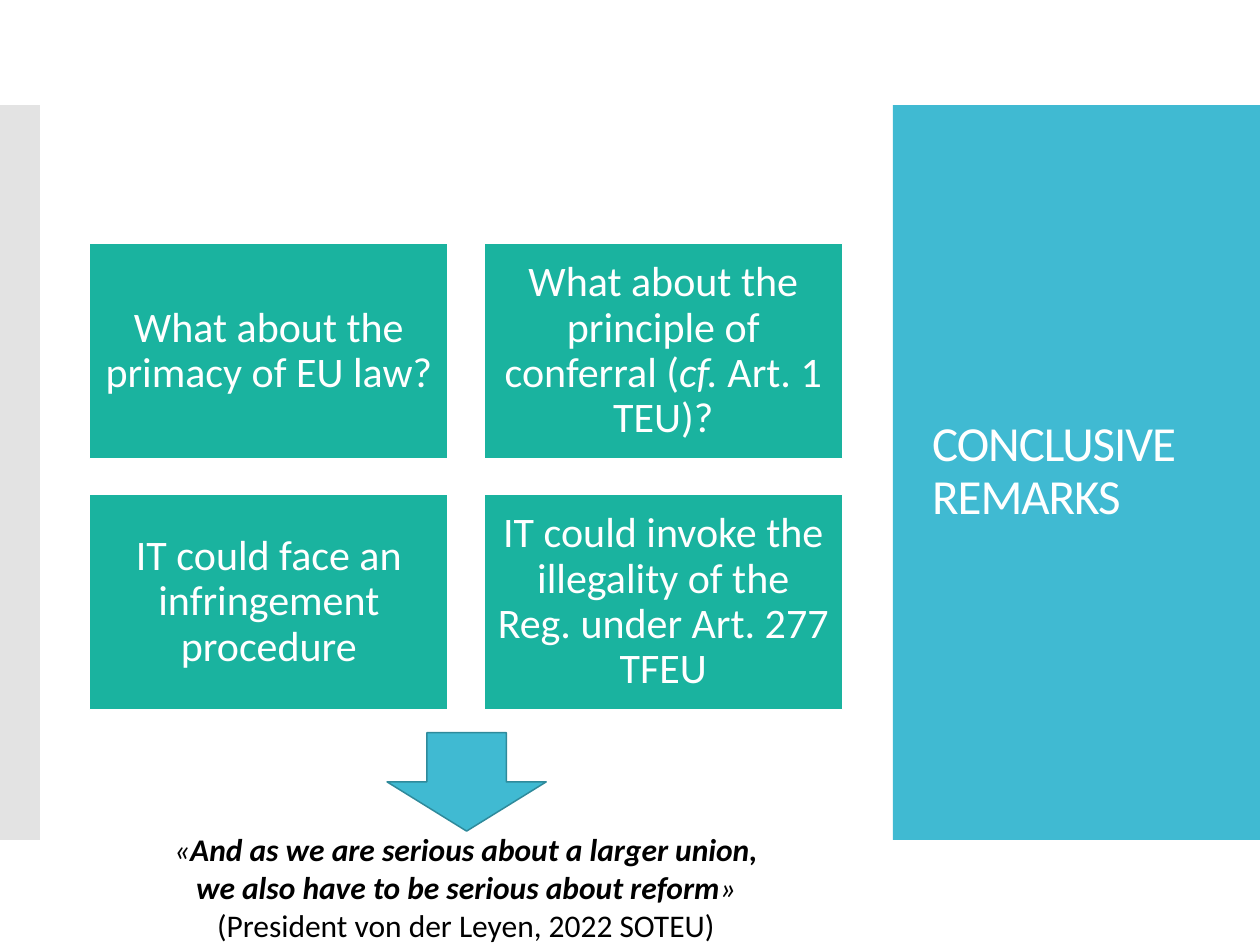
from lxml import etree
from pptx import Presentation
from pptx import util as u
from pptx.dml.color import RGBColor
from pptx.enum import shapes, text
from pptx.oxml.ns import qn

Pt = u.Pt
TEAL, GREEN, WHITE = "40BAD2", "1AB39F", "FFFFFF"


def color(hex_string):
    return RGBColor.from_string(hex_string)


def add_block(kind, left, top, width, height, fill, line=None):
    block = slide.shapes.add_shape(kind, Pt(left), Pt(top), Pt(width), Pt(height))
    block.shadow.inherit = False
    block.fill.solid()
    block.fill.fore_color.rgb = color(fill)
    if line:
        block.line.color.rgb = color(line)
        block.line.width = Pt(0.85)
    else:
        block.line.fill.background()
    return block


prs = Presentation()
prs.slide_width, prs.slide_height = Pt(720), Pt(540)
slide = prs.slides.add_slide(prs.slide_layouts[6])
RECT = shapes.MSO_SHAPE.RECTANGLE

# Side panel and half-transparent strip
add_block(RECT, 510.3, 60, 209.7, 420, TEAL)
strip = add_block(RECT, 0, 60, 22.8, 420, "C8C8C8")
strip_color = strip.fill._xPr.find(qn("a:solidFill"))[0]
etree.SubElement(strip_color, qn("a:alpha"), val="50000")

# Title
title = slide.shapes.add_textbox(Pt(525.6), Pt(88.6), Pt(174.2), Pt(362.2))
title.text_frame.word_wrap = True
title.text_frame.vertical_anchor = text.MSO_ANCHOR.MIDDLE
heading = title.text_frame.paragraphs[0]
heading.text = "CONCLUSIVE REMARKS"
heading.line_spacing = 0.9
heading_font = heading.runs[0].font
heading_font.name, heading_font.size = "Calibri", Pt(28)
heading_font.color.rgb = color(WHITE)
heading.runs[0]._r.get_or_add_rPr().set("spc", "-60")

# Two by two grid of remarks; each remark is a list of (words, italic)
remarks = [
    [("What about the primacy of EU law?", False)],
    [("What about the principle of conferral (", False), ("cf. ", True),
     ("Art. 1 TEU)?", False)],
    [("IT could face an infringement procedure", False)],
    [("IT could invoke the illegality of the Reg. under Art. 277 TFEU", False)],
]
for i, remark in enumerate(remarks):
    row, column = divmod(i, 2)
    card = add_block(RECT, 51.2 + column * 225.4, 139.2 + row * 143.4,
                     204.9, 122.9, GREEN, WHITE)
    frame = card.text_frame
    frame.word_wrap = True
    frame.vertical_anchor = text.MSO_ANCHOR.MIDDLE
    frame.margin_left = frame.margin_right = Pt(7.2)
    frame.margin_top = frame.margin_bottom = Pt(7.2)
    question = frame.paragraphs[0]
    question.alignment = text.PP_ALIGN.CENTER
    question.line_spacing = 0.9
    for words, italic in remark:
        run = question.add_run()
        run.text = words
        run.font.name, run.font.size = "Calibri", Pt(24)
        run.font.italic = italic
        run.font.color.rgb = color(WHITE)

# Arrow to the quotation
add_block(shapes.MSO_SHAPE.DOWN_ARROW, 221.2, 418.7, 90.9, 56.2, TEAL, "2F8A9B")

# Quotation; each run is (words, bold, italic)
quotation = [
    [("«", False, True),
     ("And as we are serious about a larger union, "
      "we also have to be serious about reform", True, True),
     ("»", False, True)],
    [("(President von der Leyen, 2022 SOTEU)", False, False)],
]
quote = slide.shapes.add_textbox(Pt(87.8), Pt(471), Pt(357.1), Pt(94.3)).text_frame
quote.word_wrap = True
for i, line in enumerate(quotation):
    paragraph = quote.add_paragraph() if i else quote.paragraphs[0]
    paragraph.alignment = text.PP_ALIGN.CENTER
    for words, bold, italic in line:
        run = paragraph.add_run()
        run.text = words
        run.font.name, run.font.size = "Calibri", Pt(18)
        run.font.bold, run.font.italic = bold, italic
        run.font.color.rgb = color("000000")

prs.save("out.pptx")
